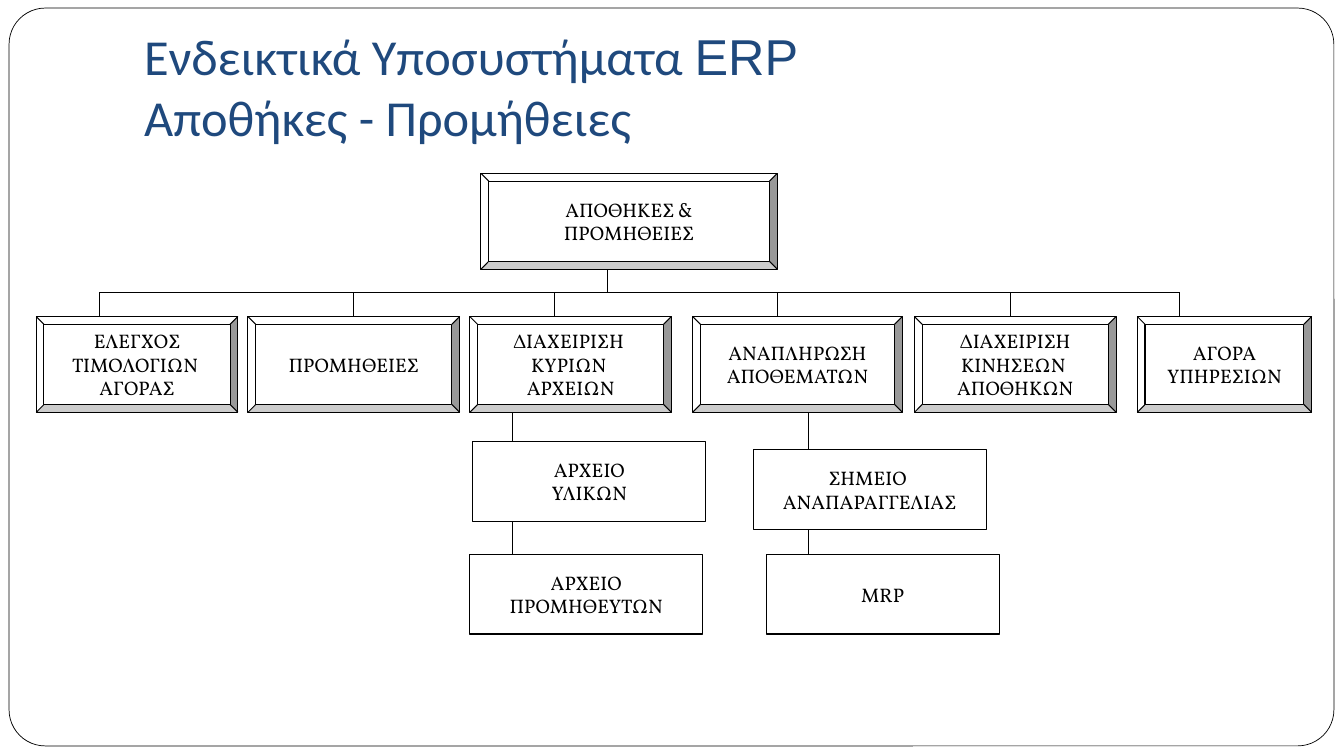
from typing import NamedTuple

from lxml.etree import SubElement
from pptx import Presentation
from pptx.dml.color import RGBColor
from pptx.enum.shapes import MSO_CONNECTOR, MSO_SHAPE
from pptx.enum.text import MSO_ANCHOR, MSO_AUTO_SIZE, PP_ALIGN
from pptx.oxml.ns import qn
from pptx.shapes.autoshape import Shape
from pptx.slide import Slide
from pptx.util import Inches, Pt

BLACK = RGBColor(0x00, 0x00, 0x00)
WHITE = RGBColor(0xFF, 0xFF, 0xFF)
NAVY = RGBColor(0x1F, 0x49, 0x7D)

MODULE_TOP, MODULE_HEIGHT = 3.14, 0.95
PART_WIDTH, PART_HEIGHT = 2.31, 0.79
BUS_Y = 2.9
LOWER_PART_TOP = 5.5


class Module(NamedTuple):
    """A bevelled box of the chart."""
    label: str
    left: float
    width: float
    top: float = MODULE_TOP


class Part(NamedTuple):
    """A plain box below a module."""
    label: str
    left: float
    top: float


class Link(NamedTuple):
    x1: float
    y1: float
    x2: float
    y2: float


MODULES = [
    Module("ΑΠΟΘΗΚΕΣ &\nΠΡΟΜΗΘΕΙΕΣ", 4.77, 2.94, top=1.72),
    Module("ΕΛΕΓΧΟΣ\nΤΙΜΟΛΟΓΙΩΝ \nΑΓΟΡΑΣ", 0.36, 2),
    Module("ΠΡΟΜΗΘΕΙΕΣ", 2.46, 2.1),
    Module("ΔΙΑΧΕΙΡΙΣΗ \nΚΥΡΙΩΝ \nΑΡΧΕΙΩΝ", 4.66, 2),
    Module("ΑΝΑΠΛΗΡΩΣΗ\nΑΠΟΘΕΜΑΤΩΝ", 6.87, 2.08),
    Module("ΔΙΑΧΕΙΡΙΣΗ\nΚΙΝΗΣΕΩΝ \nΑΠΟΘΗΚΩΝ", 9.07, 2),
    Module("ΑΓΟΡΑ\nΥΠΗΡΕΣΙΩΝ", 11.28, 1.73),
]

PARTS = [
    Part("ΑΡΧΕΙΟ\nΥΛΙΚΩΝ", 4.69, 4.38),
    Part("ΑΡΧΕΙΟ\nΠΡΟΜΗΘΕΥΤΩΝ", 4.66, LOWER_PART_TOP),
    Part("ΣΗΜΕΙΟ \nΑΝΑΠΑΡΑΓΓΕΛΙΑΣ", 7.47, 4.46),
    Part("MRP", 7.6, LOWER_PART_TOP),
]

DROPS = [0.99, 3.51, 5.5, 7.71, 10.02, 11.7]

LINKS = [
    Link(6.03, 2.66, 6.03, BUS_Y),
    Link(DROPS[0], BUS_Y, DROPS[-1], BUS_Y),
    *(Link(x, BUS_Y, x, MODULE_TOP) for x in DROPS),
    Link(5.08, 4.08, 5.08, 4.4),
    Link(5.08, 5.18, 5.08, LOWER_PART_TOP),
    Link(8.02, 4.08, 8.02, 4.47),
    Link(8.02, 5.26, 8.02, LOWER_PART_TOP),
]


def add_outlined(slide: Slide, kind: MSO_SHAPE, left: float, top: float,
                 width: float, height: float, line_width: float = 0.75) -> Shape:
    shape = slide.shapes.add_shape(kind, Inches(left), Inches(top),
                                   Inches(width), Inches(height))
    shape.shadow.inherit = False
    shape.fill.solid()
    shape.fill.fore_color.rgb = WHITE
    shape.line.color.rgb = BLACK
    shape.line.width = Pt(line_width)
    return shape


def write_label(shape: Shape, label: str) -> None:
    frame = shape.text_frame
    frame.word_wrap = False
    frame.vertical_anchor = MSO_ANCHOR.MIDDLE
    frame.text = label
    for paragraph in frame.paragraphs:
        paragraph.alignment = PP_ALIGN.CENTER
        paragraph.font.name = "Vollkorn"
        paragraph.font.size = Pt(14)
        paragraph.font.color.rgb = BLACK


def add_module(slide: Slide, module: Module) -> None:
    box = add_outlined(slide, MSO_SHAPE.BEVEL, module.left, module.top,
                       module.width, MODULE_HEIGHT)
    box.adjustments[0] = 0.081
    write_label(box, module.label)


def add_part(slide: Slide, part: Part) -> None:
    box = add_outlined(slide, MSO_SHAPE.RECTANGLE, part.left, part.top,
                       PART_WIDTH, PART_HEIGHT)
    write_label(box, part.label)


def add_link(slide: Slide, link: Link) -> None:
    line = slide.shapes.add_connector(MSO_CONNECTOR.STRAIGHT,
                                      *(Inches(value) for value in link))
    line.line.color.rgb = BLACK
    line.line.width = Pt(0.75)
    SubElement(line.element.spPr, qn("a:effectLst"))


def format_title(title: Shape) -> None:
    title.left, title.top = Inches(1.33), Inches(0.3)
    title.width, title.height = Inches(11.33), Inches(1.25)
    frame = title.text_frame
    frame.auto_size = MSO_AUTO_SIZE.NONE
    frame.word_wrap = True
    frame.vertical_anchor = MSO_ANCHOR.BOTTOM
    frame.margin_bottom = Inches(0.1)
    heading = frame.paragraphs[0]
    heading.alignment = PP_ALIGN.LEFT
    heading.font.size = Pt(36)
    heading.font.color.rgb = NAVY
    for text, font in [("Ενδεικτικά Υποσυστήματα ", "Calibri"),
                       ("ERP", "Arial"),
                       ("Αποθήκες - Προμήθειες", "Calibri")]:
        run = heading.add_run()
        run.text = text
        run.font.name = font
        if text == "ERP":
            heading.add_line_break()


def main() -> None:
    presentation = Presentation()
    presentation.slide_width = Inches(13.33)
    presentation.slide_height = Inches(7.5)
    slide = presentation.slides.add_slide(presentation.slide_layouts[5])

    # Rounded border, behind the title
    title = slide.shapes.title
    border = add_outlined(slide, MSO_SHAPE.ROUNDED_RECTANGLE,
                          0.09, 0.08, 13.14, 7.32, line_width=0.5)
    border.adjustments[0] = 0.049
    title.element.addprevious(border.element)
    format_title(title)

    # Organisation chart: lines first, boxes over them
    for link in LINKS:
        add_link(slide, link)
    for module in MODULES:
        add_module(slide, module)
    for part in PARTS:
        add_part(slide, part)

    presentation.save("out.pptx")


if __name__ == "__main__":
    main()
